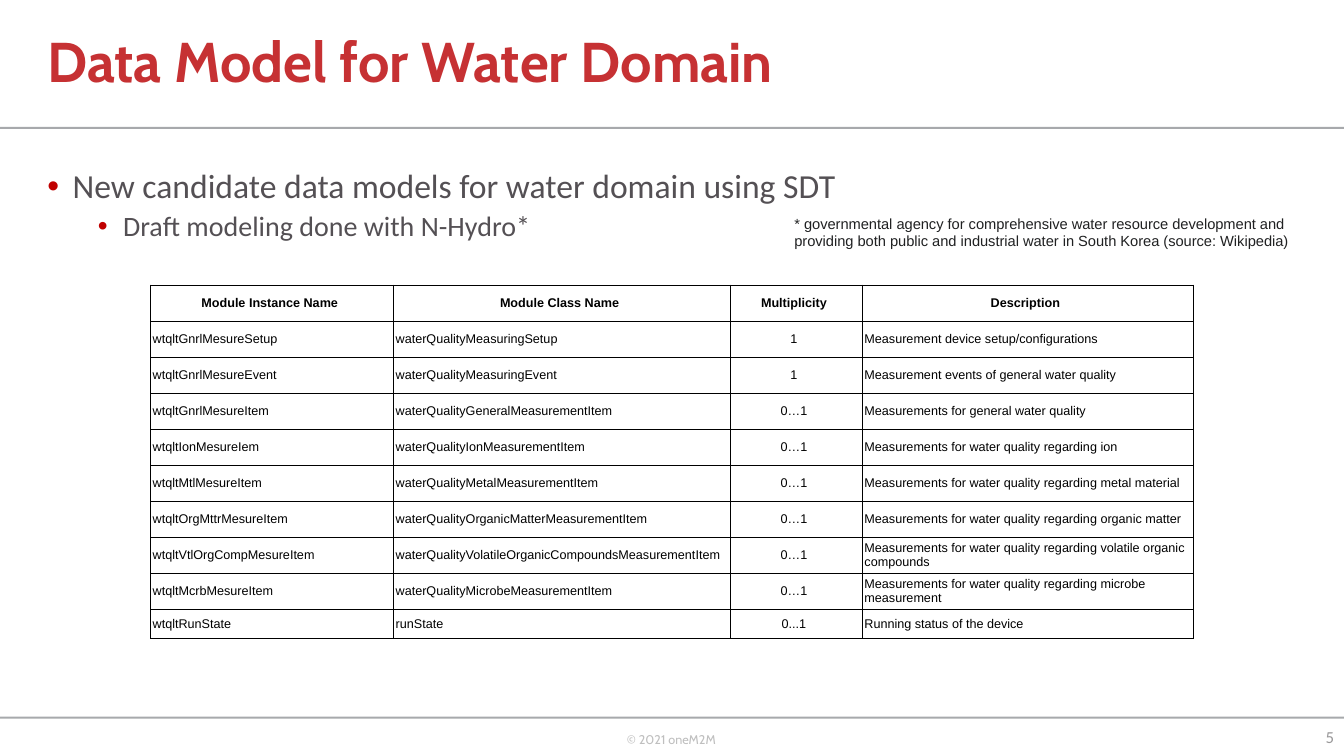
from dataclasses import dataclass

from lxml import etree
from pptx import Presentation
from pptx import util as u
from pptx.dml.color import RGBColor
from pptx.enum import shapes, text
from pptx.oxml.ns import qn


@dataclass(frozen=True)
class Theme:
    heading_font: str = "Cabin"
    body_font: str = "Calibri"
    detail_font: str = "Arial"
    title: str = "C63133"
    bullet: str = "C00000"
    body: str = "545054"
    note: str = "202122"
    table: str = "000000"
    rule: str = "A7A9AC"
    copyright: str = "BFBFBF"
    number: str = "999899"
    title_size: float = 40
    body_sizes: tuple = (24, 20)
    note_size: float = 10.5
    number_size: float = 12
    small_size: float = 9


@dataclass(frozen=True)
class Box:
    left: float
    top: float
    width: float
    height: float

    def emu(self):
        return [u.Inches(value) for value in (self.left, self.top, self.width, self.height)]


THEME = Theme()
WIDTH, HEIGHT = 13.33, 7.5
MARGIN = 0.37
RULE_HEIGHT = 0.02

BULLETS = [
    "New candidate data models for water domain using SDT",
    "Draft modeling done with N-Hydro*",
]
NOTE = ("* governmental agency for comprehensive water resource development and "
        "providing both public and industrial water in South Korea (source: Wikipedia)")

COLUMN_WIDTHS = [2.41, 3.34, 1.31, 3.28]
HEADERS = ["Module Instance Name", "Module Class Name", "Multiplicity", "Description"]
MODULES = [
    ("wtqltGnrlMesureSetup", "waterQualityMeasuringSetup", "1",
     "Measurement device setup/configurations"),
    ("wtqltGnrlMesureEvent", "waterQualityMeasuringEvent", "1",
     "Measurement events of general water quality"),
    ("wtqltGnrlMesureItem", "waterQualityGeneralMeasurementItem", "0…1",
     "Measurements for general water quality"),
    ("wtqltIonMesureIem", "waterQualityIonMeasurementItem", "0…1",
     "Measurements for water quality regarding ion"),
    ("wtqltMtlMesureItem", "waterQualityMetalMeasurementItem", "0…1",
     "Measurements for water quality regarding metal material"),
    ("wtqltOrgMttrMesureItem", "waterQualityOrganicMatterMeasurementItem", "0…1",
     "Measurements for water quality regarding organic matter"),
    ("wtqltVtlOrgCompMesureItem", "waterQualityVolatileOrganicCompoundsMeasurementItem", "0…1",
     "Measurements for water quality regarding volatile organic compounds"),
    ("wtqltMcrbMesureItem", "waterQualityMicrobeMeasurementItem", "0…1",
     "Measurements for water quality regarding microbe measurement"),
    ("wtqltRunState", "runState", "0...1", "Running status of the device"),
]


def style(paragraph, font, size, color, bold=False, align=text.PP_ALIGN.LEFT):
    paragraph.alignment = align
    for run in paragraph.runs:
        run.font.name = font
        run.font.size = u.Pt(size)
        run.font.bold = bold
        run.font.color.rgb = RGBColor.from_string(color)


def place(shape, box):
    shape.left, shape.top, shape.width, shape.height = box.emu()


def add_text(slide, box, words, *look, wrap=True, anchor=text.MSO_ANCHOR.TOP, **options):
    frame = slide.shapes.add_textbox(*box.emu()).text_frame
    frame.word_wrap = wrap
    frame.vertical_anchor = anchor
    frame.text = words
    style(frame.paragraphs[0], *look, **options)


def add_rule(slide, top):
    rule = slide.shapes.add_shape(shapes.MSO_SHAPE.RECTANGLE,
                                  *Box(0, top, WIDTH, RULE_HEIGHT).emu())
    rule.shadow.inherit = False
    rule.fill.solid()
    rule.fill.fore_color.rgb = RGBColor.from_string(THEME.rule)
    rule.line.fill.background()


def add_title(slide, box):
    title = slide.shapes.title
    place(title, box)
    frame = title.text_frame
    frame.text = "Data Model for Water Domain"
    frame.auto_size = text.MSO_AUTO_SIZE.NONE
    frame.vertical_anchor = text.MSO_ANCHOR.MIDDLE
    frame.paragraphs[0].line_spacing = 0.9
    style(frame.paragraphs[0], THEME.heading_font, THEME.title_size, THEME.title, bold=True)


def add_bullets(slide, box):
    body = slide.placeholders[1]
    place(body, box)
    frame = body.text_frame
    frame.text = "\n".join(BULLETS)
    frame.auto_size = text.MSO_AUTO_SIZE.NONE
    for level, paragraph in enumerate(frame.paragraphs):
        paragraph.level = level
        properties = paragraph._p.get_or_add_pPr()
        properties.set("marL", str(u.Inches(0.25 + 0.5 * level)))
        properties.set("indent", str(u.Inches(-0.25)))
        color = etree.SubElement(properties, qn("a:buClr"))
        etree.SubElement(color, qn("a:srgbClr"), val=THEME.bullet)
        etree.SubElement(properties, qn("a:buFont"), typeface=THEME.detail_font)
        etree.SubElement(properties, qn("a:buChar"), char="•")
        paragraph.line_spacing = 0.9
        paragraph.space_before = u.Pt(5 * level)
        style(paragraph, THEME.body_font, THEME.body_sizes[level], THEME.body)


def add_borders(cell):
    properties = cell._tc.get_or_add_tcPr()
    for side in ("lnL", "lnR", "lnT", "lnB"):
        line = etree.SubElement(properties, qn(f"a:{side}"), w=str(u.Pt(1)))
        fill = etree.SubElement(line, qn("a:solidFill"))
        etree.SubElement(fill, qn("a:srgbClr"), val=THEME.table)


def fill_cell(cell, words, align, header):
    add_borders(cell)
    cell.fill.background()
    cell.margin_left, cell.margin_right = u.Inches(0.02), u.Inches(0.07)
    cell.margin_top = cell.margin_bottom = 0
    cell.vertical_anchor = text.MSO_ANCHOR.MIDDLE
    cell.text_frame.text = words
    paragraph = cell.text_frame.paragraphs[0]
    if not header:
        paragraph.space_after = u.Pt(9)
    style(paragraph, THEME.detail_font, THEME.small_size, THEME.table, bold=header, align=align)


def add_module_table(slide, box):
    rows = [HEADERS, *MODULES]
    table = slide.shapes.add_table(len(rows), len(HEADERS), *box.emu()).table
    for column, width in zip(table.columns, COLUMN_WIDTHS):
        column.width = u.Inches(width)
    # The last row is lower than the others
    last_height = 0.29
    for row in table.rows:
        row.height = u.Inches((box.height - last_height) / len(MODULES))
    table.rows[len(MODULES)].height = u.Inches(last_height)

    align = text.PP_ALIGN
    body_aligns = [align.JUSTIFY, align.JUSTIFY, align.CENTER, align.LEFT]
    for i, row in enumerate(rows):
        for j, words in enumerate(row):
            header = i == 0
            fill_cell(table.cell(i, j), words, align.CENTER if header else body_aligns[j], header)


def add_footer(slide, box):
    add_rule(slide, box.top)
    add_text(slide, Box(box.left + 6.12, box.top + 0.1, 1.1, 0.4), "© 2021 oneM2M",
             THEME.heading_font, THEME.small_size, THEME.copyright, wrap=False)
    number_width = 0.54
    add_text(slide, Box(box.left + box.width - number_width, box.top, number_width, 0.4), "5",
             THEME.body_font, THEME.number_size, THEME.number,
             anchor=text.MSO_ANCHOR.MIDDLE, align=text.PP_ALIGN.RIGHT)


def main():
    presentation = Presentation()
    presentation.slide_width, presentation.slide_height = u.Inches(WIDTH), u.Inches(HEIGHT)
    slide = presentation.slides.add_slide(presentation.slide_layouts[1])

    # Heading
    add_rule(slide, 1.26)
    add_title(slide, Box(MARGIN, 0, 10.07, 1.28))

    # Content
    add_bullets(slide, Box(MARGIN, 1.63, 12.06, 0.72))
    table_width = sum(COLUMN_WIDTHS)
    add_module_table(slide, Box((WIDTH - table_width) / 2, 2.83, table_width, 3.51))
    add_text(slide, Box(7.78, 2.08, 5.39, 0.45), NOTE,
             THEME.detail_font, THEME.note_size, THEME.note)

    # Footer
    add_footer(slide, Box(0, 7.11, WIDTH, HEIGHT - 7.11))
    presentation.save("out.pptx")


if __name__ == "__main__":
    main()
